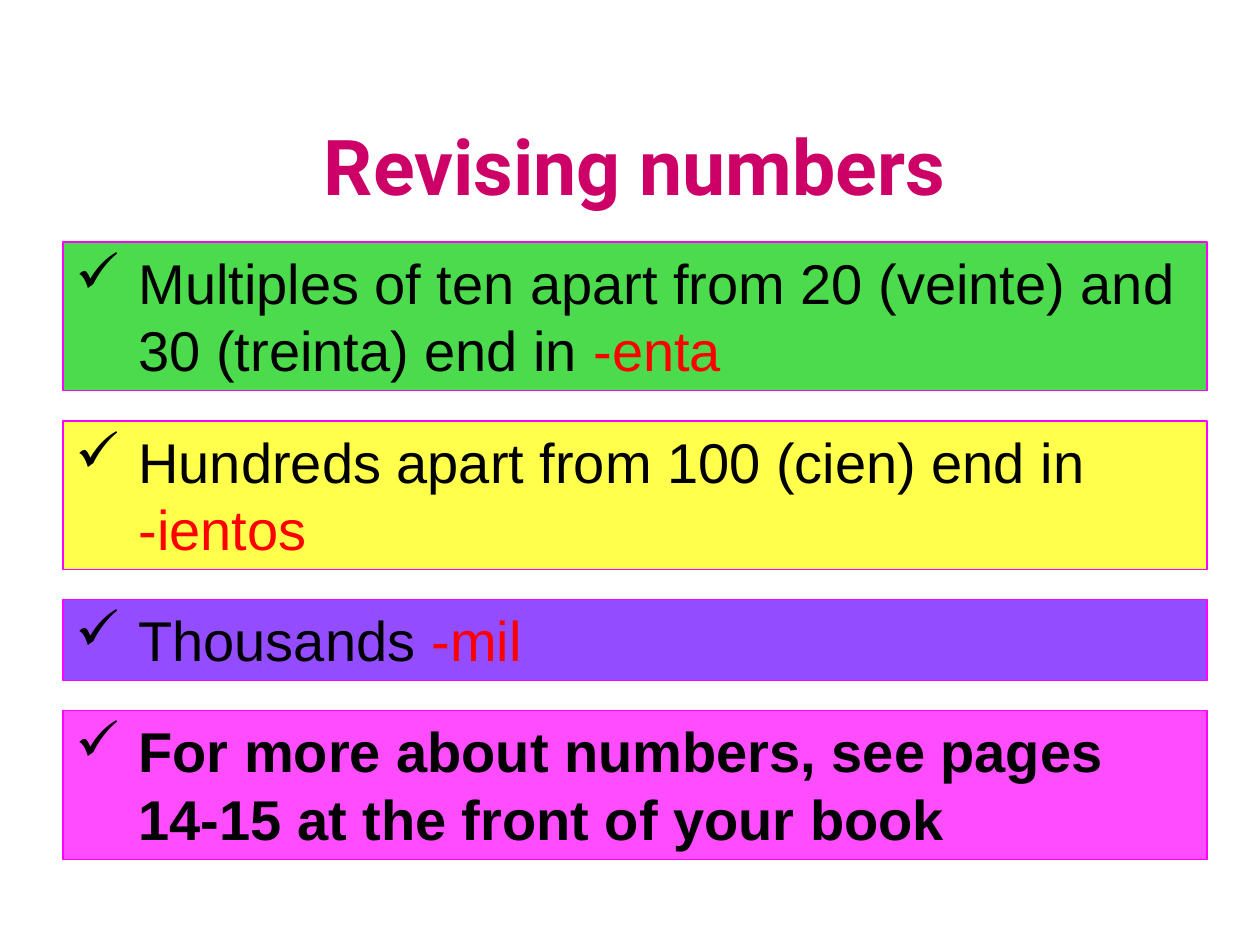
import pptx
import pptx.util
import pptx.dml.color
import pptx.enum.shapes
import pptx.enum.text
import pptx.oxml.ns
import lxml.etree

RGBColor = pptx.dml.color.RGBColor
CERISE = RGBColor(0xCC, 0x00, 0x66)
GREEN = RGBColor(0x00, 0xCC, 0x00)
YELLOW = RGBColor(0xFF, 0xFF, 0x00)
VIOLET = RGBColor(0x66, 0x00, 0xFF)
MAGENTA = RGBColor(0xFF, 0x00, 0xFF)
BLACK = RGBColor(0x00, 0x00, 0x00)
RED = RGBColor(0xFF, 0x00, 0x00)

LEFT, WIDTH = 0.5, 9.08
TITLE_TOP, TITLE_HEIGHT = 0.68, 1.25
BANDS_TOP, BAND_GAP = 1.92, 0.24
BAND_HEIGHTS = {1: 0.64, 2: 1.18}

BANDS = [
    (GREEN, 2, False, "Multiples of ten apart from 20 (veinte) and 30 (treinta) end in ", "-enta"),
    (YELLOW, 2, False, "Hundreds apart from 100 (cien) end in ", "-ientos"),
    (VIOLET, 1, False, "Thousands ", "-mil"),
    (MAGENTA, 2, True, "For more about numbers, see pages 14-15 at the front of your book", ""),
]


def add_text(para, text, size=32, font="Arial", color=BLACK, bold=False):
    span = para.add_run()
    span.text = text
    span.font.size = pptx.util.Pt(size)
    span.font.name = font
    span.font.color.rgb = color
    span.font.bold = bold


def add_tick(para):
    properties = para._p.get_or_add_pPr()
    indent = pptx.util.Inches(0.5)
    properties.set("marL", str(indent))
    properties.set("indent", str(-indent))
    bullet = lxml.etree.SubElement(properties, pptx.oxml.ns.qn("a:buChar"))
    bullet.set("char", "✓")


def set_opacity(box, percent):
    color = box._element.spPr.find(".//" + pptx.oxml.ns.qn("a:srgbClr"))
    alpha = lxml.etree.SubElement(color, pptx.oxml.ns.qn("a:alpha"))
    alpha.set("val", str(percent * 1000))


def add_title(page, text):
    title = page.shapes.title
    title.left, title.top = pptx.util.Inches(LEFT), pptx.util.Inches(TITLE_TOP)
    title.width, title.height = pptx.util.Inches(WIDTH), pptx.util.Inches(TITLE_HEIGHT)
    title.text_frame.vertical_anchor = pptx.enum.text.MSO_ANCHOR.MIDDLE
    para = title.text_frame.paragraphs[0]
    para.alignment = pptx.enum.text.PP_ALIGN.CENTER
    add_text(para, text, size=44, font="Roboto", color=CERISE, bold=True)


def add_band(page, top, height, fill, rule, ending, bold):
    box = page.shapes.add_shape(
        pptx.enum.shapes.MSO_SHAPE.RECTANGLE,
        *map(pptx.util.Inches, (LEFT, top, WIDTH, height)))
    box.shadow.inherit = False
    box.fill.solid()
    box.fill.fore_color.rgb = fill
    set_opacity(box, 70)
    box.line.color.rgb = MAGENTA
    box.line.width = pptx.util.Pt(0.75)
    frame = box.text_frame
    frame.word_wrap = True
    frame.auto_size = pptx.enum.text.MSO_AUTO_SIZE.SHAPE_TO_FIT_TEXT
    frame.vertical_anchor = pptx.enum.text.MSO_ANCHOR.TOP
    para = frame.paragraphs[0]
    para.alignment = pptx.enum.text.PP_ALIGN.LEFT
    add_tick(para)
    add_text(para, rule, bold=bold)
    if ending:
        add_text(para, ending, color=RED, bold=bold)


def main():
    deck = pptx.Presentation()
    deck.slide_width = pptx.util.Inches(10)
    deck.slide_height = pptx.util.Inches(7.5)
    page = deck.slides.add_slide(deck.slide_layouts.get_by_name("Title Only"))
    add_title(page, "Revising numbers")
    top = BANDS_TOP
    for fill, lines, bold, rule, ending in BANDS:
        height = BAND_HEIGHTS[lines]
        add_band(page, top, height, fill, rule, ending, bold)
        top += height + BAND_GAP
    deck.save("out.pptx")


if __name__ == "__main__":
    main()
